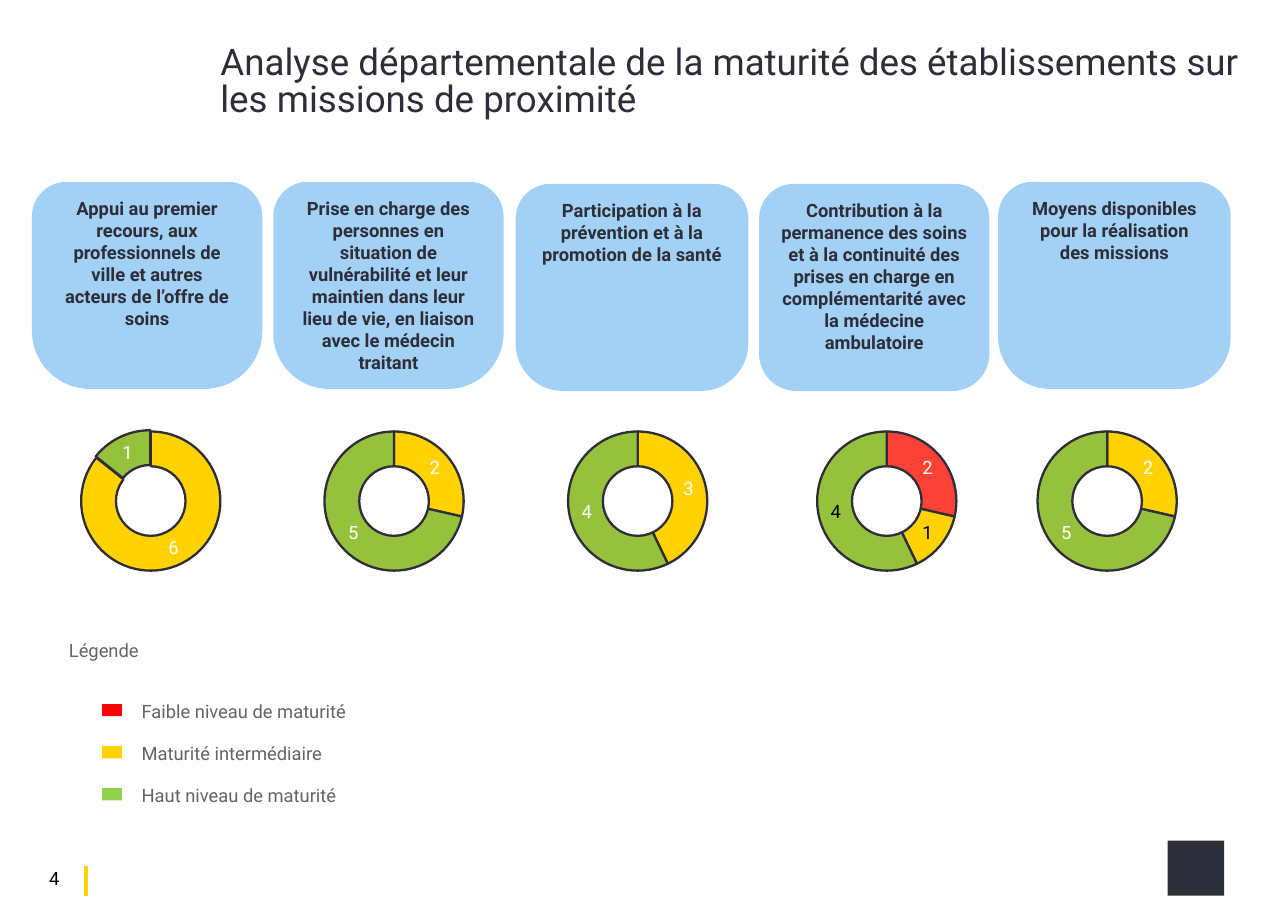
from lxml.etree import SubElement
from pptx import Presentation
from pptx.chart.data import CategoryChartData
from pptx.dml.color import RGBColor
from pptx.enum.chart import XL_CHART_TYPE as ChartType
from pptx.enum.shapes import MSO_CONNECTOR as Connector, MSO_SHAPE as Shape
from pptx.enum.text import MSO_ANCHOR as Anchor, PP_ALIGN as Align
from pptx.oxml import parse_xml
from pptx.oxml.ns import nsdecls, qn
from pptx.util import Pt

FONT = "Roboto"
DARK, GREY, BLACK, WHITE = "2E2E38", "646464", "000000", "FFFFFF"
YELLOW, CARD_BLUE = "FFD200", "A2D1F5"
LEVEL_COLOURS = ["FF4136", YELLOW, "95C13D"]

TITLE = "Analyse départementale de la maturité des établissements sur les missions de proximité"

# text, card left, top, width, bottom rounding, chart left, values, label colour, exploded point
MISSIONS = [
    ("Appui au premier recours, aux professionnels de ville et autres acteurs de l’offre de soins",
     20.9, 118.8, 150.5, 0.28, 13, (None, 6, 1), WHITE, 2),
    ("Prise en charge des personnes en situation de vulnérabilité et leur maintien dans leur "
     "lieu de vie, en liaison avec le médecin traitant",
     178.6, 118.8, 150.5, 0.27, 172, (None, 2, 5), WHITE, None),
    ("Participation à la prévention et à la promotion de la santé",
     337, 120.2, 152, 0.23, 331.2, (None, 3, 4), WHITE, None),
    ("Contribution à la permanence des soins et à la continuité des prises en charge en "
     "complémentarité avec la médecine ambulatoire",
     496.1, 120.2, 150.5, 0.18, 494, (2, 1, 4), BLACK, None),
    ("Moyens disponibles pour la réalisation des missions",
     652.3, 118.8, 152, 0.25, 638, (0, 2, 5), WHITE, None),
]

LEGEND = [
    ("Faible niveau de maturité", "FF0000"),
    ("Maturité intermédiaire", YELLOW),
    ("Haut niveau de maturité", "92D050"),
]


def rgb(colour):
    return RGBColor.from_string(colour)


def set_font(font, size, colour, bold=False):
    font.name, font.size, font.bold = FONT, Pt(size), bold
    font.color.rgb = rgb(colour)


def add_block(slide, kind, left, top, width, height, colour):
    block = slide.shapes.add_shape(kind, Pt(left), Pt(top), Pt(width), Pt(height))
    block.shadow.inherit = False
    block.fill.solid()
    block.fill.fore_color.rgb = rgb(colour)
    block.line.fill.background()
    return block


def add_text(slide, text, left, top, width, height, size, colour, align=Align.LEFT, inset=True):
    frame = slide.shapes.add_textbox(Pt(left), Pt(top), Pt(width), Pt(height)).text_frame
    frame.word_wrap = True
    if not inset:
        frame.margin_left = frame.margin_right = frame.margin_top = frame.margin_bottom = 0
    paragraph = frame.paragraphs[0]
    paragraph.text, paragraph.alignment = text, align
    set_font(paragraph.font, size, colour)
    return paragraph


def add_title(slide, left, top, width, height):
    add_text(slide, TITLE, left, top, width, height, 24, DARK, inset=False).line_spacing = 0.85


def add_card(slide, text, left, top, width, height, rounding):
    card = add_block(slide, Shape.ROUND_2_SAME_RECTANGLE, left, top, width, height, CARD_BLUE)
    card.adjustments[0], card.adjustments[1] = 0.167, rounding
    frame = card.text_frame
    frame.word_wrap, frame.vertical_anchor = True, Anchor.TOP
    paragraph = frame.paragraphs[0]
    paragraph.text, paragraph.alignment = text, Align.CENTER
    set_font(paragraph.font, 12, DARK, bold=True)


def set_plot_box(chart, **box):
    plot_area = chart._chartSpace.xpath("c:chart/c:plotArea")[0]
    for old in plot_area.findall(qn("c:layout")):
        plot_area.remove(old)
    layout = parse_xml(f'<c:layout {nsdecls("c")}><c:manualLayout/></c:layout>')
    settings = {"layoutTarget": "inner", "xMode": "edge", "yMode": "edge", **box}
    for tag, value in settings.items():
        SubElement(layout[0], qn(f"c:{tag}")).set("val", str(value))
    plot_area.insert(0, layout)


def add_ring(slide, left, top, width, height, values, label_colour, exploded):
    data = CategoryChartData()
    data.categories = ["1", "2", "3"]
    data.add_series("Series 1", values)
    chart = slide.shapes.add_chart(
        ChartType.DOUGHNUT, Pt(left), Pt(top), Pt(width), Pt(height), data).chart
    chart.has_legend = chart.has_title = False
    set_font(chart.font, 10, label_colour)
    set_plot_box(chart, x=0.22, y=0.06, w=0.5, h=0.89)

    plot = chart.plots[0]
    plot.vary_by_categories = True
    plot._element.find(qn("c:holeSize")).set("val", "75")
    ring = plot.series[0]
    for index, colour in enumerate(LEVEL_COLOURS):
        level = ring.points[index].format
        level.fill.solid()
        level.fill.fore_color.rgb = rgb(colour)
        level.line.color.rgb = rgb(DARK)
        level.line.width = Pt(1.5)
    if exploded is not None:
        outline = ring._element.xpath(f'c:dPt[c:idx/@val="{exploded}"]/c:spPr')[0]
        outline.addprevious(parse_xml(f'<c:explosion {nsdecls("c")} val="4"/>'))

    labels = ring.data_labels
    labels.show_value = True
    labels.number_format, labels.number_format_is_linked = "0;;", False  # zeros stay unlabelled
    set_font(labels.font, 12, label_colour)
    if values[0]:
        set_font(ring.points[0].data_label.font, 12, WHITE)


def add_legend_text(slide, text, left, top, width):
    paragraph = add_text(slide, text, left, top, width, 22, 12, GREY, Align.JUSTIFY)
    paragraph._p.get_or_add_pPr().set("marL", str(Pt(6.5)))


def add_legend(slide, left, top, width):
    add_legend_text(slide, "Légende", left - 6.5, top, width)
    for row, (text, colour) in enumerate(LEGEND):
        row_top = top + 40.2 + 27.5 * row
        add_block(slide, Shape.RECTANGLE, left + 28.7, row_top + 6, 13, 8, colour)
        add_legend_text(slide, text, left + 41, row_top, width)


def add_footer(slide, left, top, width):
    number = add_text(slide, "4", left, top + 3, 35, 15, 12, BLACK, Align.CENTER, inset=False)
    number.line_spacing = 0.85
    bar_x = Pt(left + 38.2)
    bar = slide.shapes.add_connector(Connector.STRAIGHT, bar_x, Pt(top), bar_x, Pt(top + 19.5))
    bar.line.color.rgb, bar.line.width = rgb(YELLOW), Pt(3)
    SubElement(bar._element.spPr, qn("a:effectLst"))
    # Plain block in place of the logo
    add_block(slide, Shape.RECTANGLE, left + width - 37, top - 16.5, 37, 36, DARK)


def main():
    deck = Presentation()
    deck.slide_width, deck.slide_height = Pt(841.68), Pt(595.44)
    slide = deck.slides.add_slide(deck.slide_layouts[6])

    add_title(slide, 144, 29.5, 666, 42)
    for text, left, top, width, rounding, ring_left, values, colour, exploded in MISSIONS:
        add_card(slide, text, left, top, width, 135.4, rounding)
        add_ring(slide, ring_left, 273, 182, 108, values, colour, exploded)
    add_legend(slide, 38, 414, 280)
    add_footer(slide, 18, 566, 782)
    deck.save("out.pptx")


if __name__ == "__main__":
    main()
